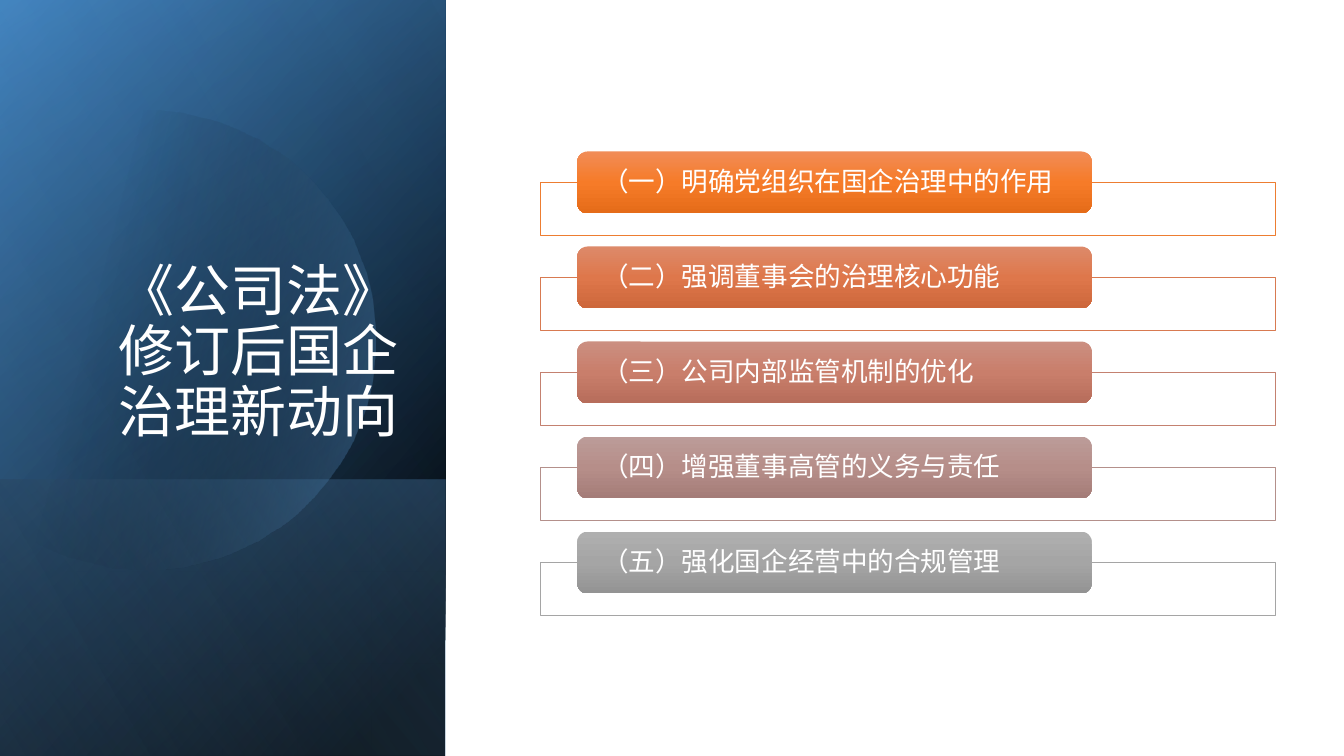
from math import acos, cos, pi, sin

from lxml.etree import SubElement
from pptx import Presentation
from pptx.dml.color import RGBColor
from pptx.enum.shapes import MSO_SHAPE
from pptx.enum.text import MSO_ANCHOR, PP_ALIGN
from pptx.oxml.ns import qn
from pptx.util import Pt

TITLE = "《公司法》修订后国企治理新动向"
TOPICS = [
    ("（一）明确党组织在国企治理中的作用", "ED7D31", ("F18C57", "F67B28", "E56C19")),
    ("（二）强调董事会的治理核心功能", "D87A51", ("DD8A6A", "DE774B", "CD673B")),
    ("（三）公司内部监管机制的优化", "C48170", ("CB8F81", "C97E6B", "B76D5B")),
    ("（四）增强董事高管的义务与责任", "B4908B", ("BC9C99", "B68E89", "A47C78")),
    ("（五）强化国企经营中的合规管理", "A5A5A5", ("AFAFAF", "A5A5A5", "939393")),
]
COLOURS = {
    "white": "FFFFFF",
    "black": "000000",
    "deep": "2E75B6",
    "blue": "5B9BD5",
    "pale": "9DC3E6",
}
FONT = "Noto Sans CJK SC"
PANEL = (0, 0, 318.24, 540)
LOWER_PANEL = (0, 342.6, 318.24, 197.4)
BASE_LAYERS = [
    (PANEL, [(8, "black", 100), (100, "deep", 100)], 220),
    (PANEL, [(0, "black", 0), (99, "blue", 46)], 240),
    (LOWER_PANEL, [(2, "blue", 29), (100, "black", 30)], 140),
]
CIRCLE_STOPS = [(29, "black", 0), (100, "blue", 43)]
TOP_LAYER = (PANEL, [(0, "black", 0), (99, "pale", 11)], 150)
CIRCLE_X, CIRCLE_Y, CIRCLE_RADIUS = 104, 243, 164
ARC_STEPS = 90
ROW_PITCH = 67.88


def paint_gradient(shape, stops, angle):
    """Fill a shape with (position, colour, opacity) stops along a clockwise angle."""
    shape.shadow.inherit = False
    shape.line.fill.background()
    shape.fill.gradient()
    gradient = shape._element.spPr.find(qn("a:gradFill"))
    stop_list = gradient.find(qn("a:gsLst"))
    for old_stop in list(stop_list):
        stop_list.remove(old_stop)
    for position, colour, opacity in stops:
        stop = SubElement(stop_list, qn("a:gs"), pos=str(position * 1000))
        value = SubElement(stop, qn("a:srgbClr"), val=colour)
        if opacity < 100:
            SubElement(value, qn("a:alpha"), val=str(opacity * 1000))
    gradient.find(qn("a:lin")).set("ang", str(angle * 60000))


def named(stops):
    """Replace colour names by their hex values."""
    return [(position, COLOURS[name], opacity) for position, name, opacity in stops]


def add_box(slide, preset, box):
    """Add a preset shape at left, top, width, height in points."""
    return slide.shapes.add_shape(preset, *[Pt(length) for length in box])


def add_layer(slide, box, stops, angle):
    """Add one gradient layer of the side panel."""
    paint_gradient(add_box(slide, MSO_SHAPE.RECTANGLE, box), named(stops), angle)


def add_circle(slide):
    """Add the circle that the left slide edge cuts off."""
    limit = acos(-CIRCLE_X / CIRCLE_RADIUS)
    angles = [-limit + 2 * limit * step / ARC_STEPS for step in range(ARC_STEPS + 1)]
    points = [
        (CIRCLE_X + CIRCLE_RADIUS * cos(angle), CIRCLE_Y + CIRCLE_RADIUS * sin(angle))
        for angle in angles
    ]
    builder = slide.shapes.build_freeform(*points[0], scale=Pt(1))
    builder.add_line_segments(points[1:], close=True)
    paint_gradient(builder.convert_to_shape(), named(CIRCLE_STOPS), 14)


def write_text(shape, text, size, alignment, anchor):
    """Write one white run into a shape."""
    frame = shape.text_frame
    frame.word_wrap = True
    frame.vertical_anchor = anchor
    paragraph = frame.paragraphs[0]
    paragraph.alignment = alignment
    paragraph.line_spacing = 0.9
    run = paragraph.add_run()
    run.text = text
    run.font.size = Pt(size)
    run.font.name = FONT
    run.font.color.rgb = RGBColor.from_string(COLOURS["white"])
    SubElement(run.font._element, qn("a:ea"), typeface=FONT)
    return frame


def add_topic(slide, row, text, outline, shades):
    """Add one outlined frame with its labelled pill."""
    offset = row * ROW_PITCH
    frame = add_box(slide, MSO_SHAPE.RECTANGLE, (385.7, 130.2 + offset, 525, 37.8))
    frame.shadow.inherit = False
    frame.fill.solid()
    frame.fill.fore_color.rgb = RGBColor.from_string(COLOURS["white"])
    frame.line.color.rgb = RGBColor.from_string(outline)
    frame.line.width = Pt(0.5)

    pill = add_box(slide, MSO_SHAPE.ROUNDED_RECTANGLE, (412.3, 108.2 + offset, 367.5, 44.2))
    paint_gradient(pill, [(50 * i, shade, 100) for i, shade in enumerate(shades)], 90)
    label = write_text(pill, text, 19, PP_ALIGN.LEFT, MSO_ANCHOR.MIDDLE)
    label.margin_left = label.margin_right = Pt(15.8)
    label.margin_top = label.margin_bottom = 0


def main():
    """Build and save the slide."""
    presentation = Presentation()
    presentation.slide_width, presentation.slide_height = Pt(960), Pt(540)
    slide = presentation.slides.add_slide(presentation.slide_layouts[6])
    for layer in BASE_LAYERS:
        add_layer(slide, *layer)
    add_circle(slide)
    add_layer(slide, *TOP_LAYER)
    title = slide.shapes.add_textbox(Pt(46), Pt(132.5), Pt(245.5), Pt(188.6))
    write_text(title, TITLE, 40, PP_ALIGN.RIGHT, MSO_ANCHOR.BOTTOM)
    for row, topic in enumerate(TOPICS):
        add_topic(slide, row, *topic)
    presentation.save("out.pptx")


if __name__ == "__main__":
    main()
